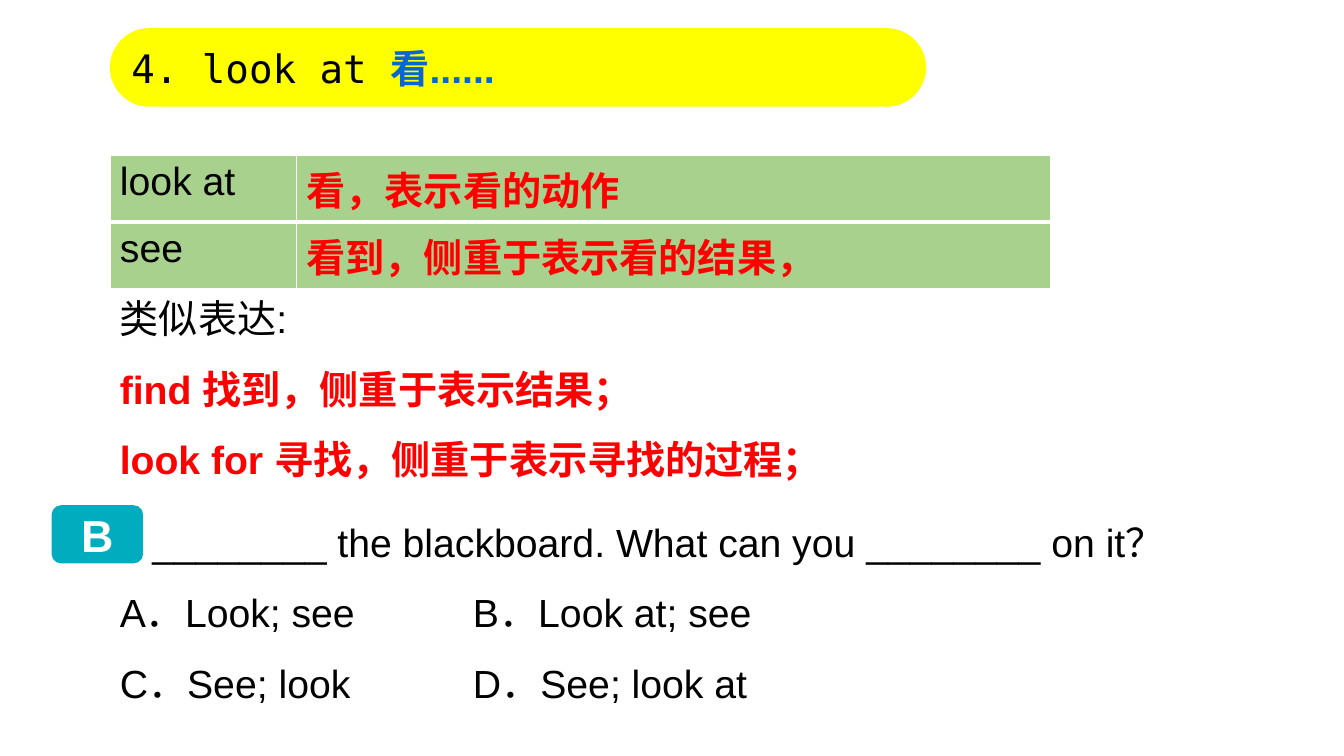
from lxml.etree import SubElement
from pptx import Presentation
from pptx.dml.color import RGBColor
from pptx.enum.shapes import MSO_SHAPE
from pptx.enum.text import MSO_ANCHOR, PP_ALIGN
from pptx.oxml.ns import qn
from pptx.util import Cm, Pt

BLACK = RGBColor(0x00, 0x00, 0x00)
WHITE = RGBColor(0xFF, 0xFF, 0xFF)
RED = RGBColor(0xFF, 0x00, 0x00)
BLUE = RGBColor(0x07, 0x66, 0xD4)
YELLOW = RGBColor(0xFF, 0xFF, 0x00)
GREEN = RGBColor(0xA9, 0xD1, 0x8E)
TEAL = RGBColor(0x01, 0xAC, 0xBE)

HEADING = [
    ("4. look at ", "DejaVu Sans Mono", BLACK, False),
    ("看", "Noto Sans CJK SC", BLUE, True),
    ("......", "Arial", BLUE, True),
]
MEANINGS = [
    ("look at", "看，表示看的动作"),
    ("see", "看到，侧重于表示看的结果，"),
]
SIMILAR = [
    ("类似表达:", BLACK, False),
    ("find 找到，侧重于表示结果；", RED, True),
    ("look for 寻找，侧重于表示寻找的过程；", RED, True),
]
QUESTION = [
    ("________ the blackboard. What can you ________ on it？", BLACK, False),
    ("A．Look; see\tB．Look at; see", BLACK, False),
    ("C．See; look\tD．See; look at", BLACK, False),
]
ANSWER = "B"

LEFT = Cm(2.77)
COLUMNS = (Cm(4.7), Cm(19))
ROW_HEIGHT = Cm(1.06)
BLANK_INDENT = Cm(0.82)
OPTION_TAB = Cm(8.9)


def style(font, name, color, bold, size=28):
    font.name = name
    font.size = Pt(size)
    font.bold = bold
    font.color.rgb = color


def add_box(slide, left, top, width, height, fill):
    box = slide.shapes.add_shape(MSO_SHAPE.ROUNDED_RECTANGLE, left, top, width, height)
    box.shadow.inherit = False
    box.fill.solid()
    box.fill.fore_color.rgb = fill
    box.line.fill.background()
    box.text_frame.vertical_anchor = MSO_ANCHOR.MIDDLE
    return box


def add_lines(slide, lines, top, width):
    frame = slide.shapes.add_textbox(LEFT, top, width, Cm(5.64)).text_frame
    frame.word_wrap = True
    for i, (text, color, bold) in enumerate(lines):
        paragraph = frame.add_paragraph() if i else frame.paragraphs[0]
        paragraph.text = text
        paragraph.line_spacing = 1.5
        if "\t" in text:
            tabs = SubElement(paragraph._p.get_or_add_pPr(), qn("a:tabLst"))
            SubElement(tabs, qn("a:tab"), pos=str(OPTION_TAB), algn="l")
        style(paragraph.font, "Arial", color, bold)
    return frame


def add_borders(cell, widths):
    properties = cell._tc.get_or_add_tcPr()
    for i, (side, width) in enumerate(widths.items()):
        line = properties.makeelement(qn(f"a:ln{side}"), {"w": str(Pt(width))})
        fill = SubElement(line, qn("a:solidFill"))
        SubElement(fill, qn("a:srgbClr"), val=str(WHITE))
        properties.insert(i, line)


def add_meanings(slide):
    table = slide.shapes.add_table(
        len(MEANINGS), len(COLUMNS), LEFT, Cm(3.91), sum(COLUMNS), ROW_HEIGHT * len(MEANINGS)
    ).table
    for column, width in zip(table.columns, COLUMNS):
        column.width = width
    for r, meaning in enumerate(MEANINGS):
        table.rows[r].height = ROW_HEIGHT
        for c, text in enumerate(meaning):
            cell = table.cell(r, c)
            cell.text = text
            cell.fill.solid()
            cell.fill.fore_color.rgb = GREEN
            name, color = ("Times New Roman", RED) if c else ("Arial", BLACK)
            style(cell.text_frame.paragraphs[0].font, name, color, bool(c))
            add_borders(cell, {"L": 1, "R": 1, "T": 3 if r else 1, "B": 1 if r else 3})


def main():
    deck = Presentation()
    deck.slide_width, deck.slide_height = Cm(33.87), Cm(19.05)
    slide = deck.slides.add_slide(deck.slide_layouts[6])

    heading = add_box(slide, LEFT, Cm(0.71), Cm(20.57), Cm(1.98), YELLOW)
    heading.adjustments[0] = 0.5
    title = heading.text_frame.paragraphs[0]
    title.alignment = PP_ALIGN.LEFT
    for text, name, color, bold in HEADING:
        run = title.add_run()
        run.text = text
        style(run.font, name, color, bold)

    add_meanings(slide)
    add_lines(slide, SIMILAR, Cm(6.7), Cm(24.97))
    question = add_lines(slide, QUESTION, Cm(12.34), Cm(28.9))
    question.paragraphs[0]._p.get_or_add_pPr().set("indent", str(BLANK_INDENT))

    answer = add_box(slide, Cm(1.3), Cm(12.73), Cm(2.31), Cm(1.47), TEAL)
    answer.text_frame.text = ANSWER
    letter = answer.text_frame.paragraphs[0]
    letter.alignment = PP_ALIGN.CENTER
    style(letter.font, "Arial", WHITE, True, 32)

    deck.save("out.pptx")


if __name__ == "__main__":
    main()
